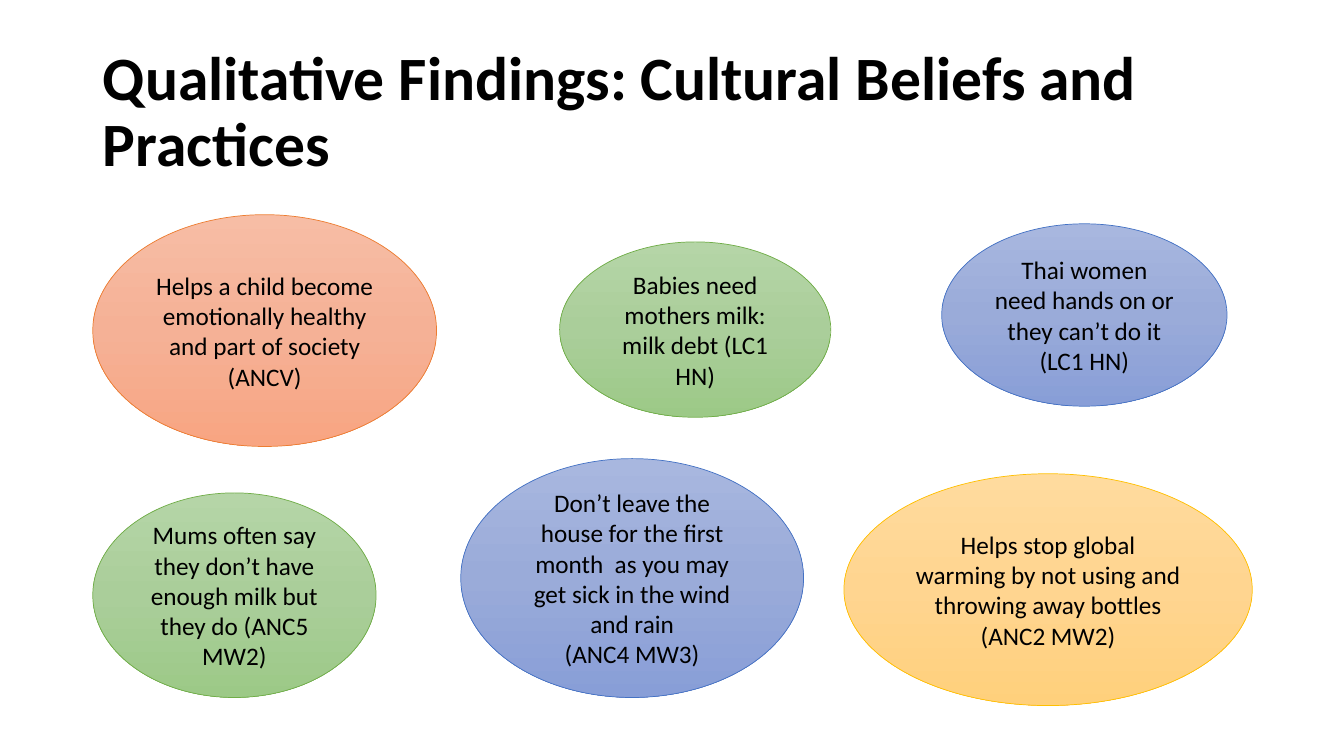
import copy

from pptx import Presentation
from pptx.dml.color import RGBColor
from pptx.enum.shapes import MSO_SHAPE
from pptx.enum.text import MSO_ANCHOR, MSO_AUTO_SIZE, PP_ALIGN
from pptx.oxml.ns import qn
from pptx.util import Inches, Pt

ELLIPSE = MSO_SHAPE.OVAL
MIDDLE = MSO_ANCHOR.MIDDLE
LEFT, CENTER = PP_ALIGN.LEFT, PP_ALIGN.CENTER
NO_AUTOFIT = MSO_AUTO_SIZE.NONE
TITLE_ONLY = 5

COLORS = {
    "text": "000000",
    "orange line": "ED7D31",
    "orange fill": ("F7BDA5", "F5B196", "F8A582"),
    "gold line": "FFC000",
    "gold fill": ("FFDB9E", "FFD590", "FFD07C"),
    "blue line": "4472C4",
    "blue fill": ("A8B7DF", "9AABD9", "889ED7"),
    "green line": "70AD47",
    "green fill": ("B5D5A7", "AACE9A", "9CC987"),
}

# Each quote: colour, (left, top, width, height), text
QUOTES = [
    ("orange", (0.92, 2.13, 3.41, 2.3),
     "Helps a child become emotionally healthy and part of society (ANCV)"),
    ("gold", (8.37, 4.7, 4.05, 2.3),
     "Helps stop global warming by not using and throwing away bottles\n(ANC2 MW2)"),
    ("blue", (4.57, 4.55, 3.4, 2.37),
     "Don’t leave the house for the first month  as you may get sick in the wind and rain\n"
     "(ANC4 MW3)"),
    ("green", (5.55, 2.4, 2.69, 1.74),
     "Babies need mothers milk: milk debt (LC1 HN)"),
    ("blue", (9.34, 2.22, 2.83, 1.81),
     "Thai women need hands on or they can’t do it (LC1 HN)"),
    ("green", (0.92, 4.89, 2.81, 2.03),
     "Mums often say they don’t have enough milk but they do (ANC5 MW2)"),
]


class SlideBuilder:
    font_name = "Calibri"
    title_size = Pt(44)
    quote_size = Pt(18)
    line_width = Pt(0.5)

    def __init__(self, slide):
        self.slide = slide

    def set_text(self, shape, text, size, alignment, bold=False, line_spacing=None):
        text_frame = shape.text_frame
        text_frame.text = text
        text_frame.word_wrap = True
        text_frame.auto_size = NO_AUTOFIT
        text_frame.vertical_anchor = MIDDLE
        for paragraph in text_frame.paragraphs:
            paragraph.alignment = alignment
            paragraph.line_spacing = line_spacing
            for run in paragraph.runs:
                run.font.name = self.font_name
                run.font.size = size
                run.font.bold = bold
                run.font.color.rgb = RGBColor.from_string(COLORS["text"])

    def title(self, box, text):
        shape = self.slide.shapes.title
        shape.left, shape.top, shape.width, shape.height = map(Inches, box)
        self.set_text(shape, text, self.title_size, LEFT, bold=True, line_spacing=0.9)

    def gradient(self, shape, colors):
        shape.fill.gradient()
        shape.fill.gradient_angle = 270  # top to bottom
        # The default gradient has two stops; add one halfway
        stop_list = shape.element.spPr.find(qn("a:gradFill")).find(qn("a:gsLst"))
        stop_list.insert(1, copy.deepcopy(stop_list[0]))
        for stop, position, color in zip(shape.fill.gradient_stops, (0, 0.5, 1), colors):
            stop.position = position
            stop.color.rgb = RGBColor.from_string(color)

    def quote(self, color, box, text):
        shape = self.slide.shapes.add_shape(ELLIPSE, *map(Inches, box))
        shape.shadow.inherit = False
        self.gradient(shape, COLORS[f"{color} fill"])
        shape.line.color.rgb = RGBColor.from_string(COLORS[f"{color} line"])
        shape.line.width = self.line_width
        self.set_text(shape, text, self.quote_size, CENTER)


def main():
    presentation = Presentation()
    presentation.slide_width = Inches(13.33)
    presentation.slide_height = Inches(7.5)
    slide = presentation.slides.add_slide(presentation.slide_layouts[TITLE_ONLY])
    builder = SlideBuilder(slide)

    # Title
    builder.title((0.92, 0.4, 11.5, 1.45),
                  "Qualitative Findings: Cultural Beliefs and Practices")

    # Quotes in ellipses
    for color, box, text in QUOTES:
        builder.quote(color, box, text)

    presentation.save("out.pptx")


if __name__ == "__main__":
    main()
